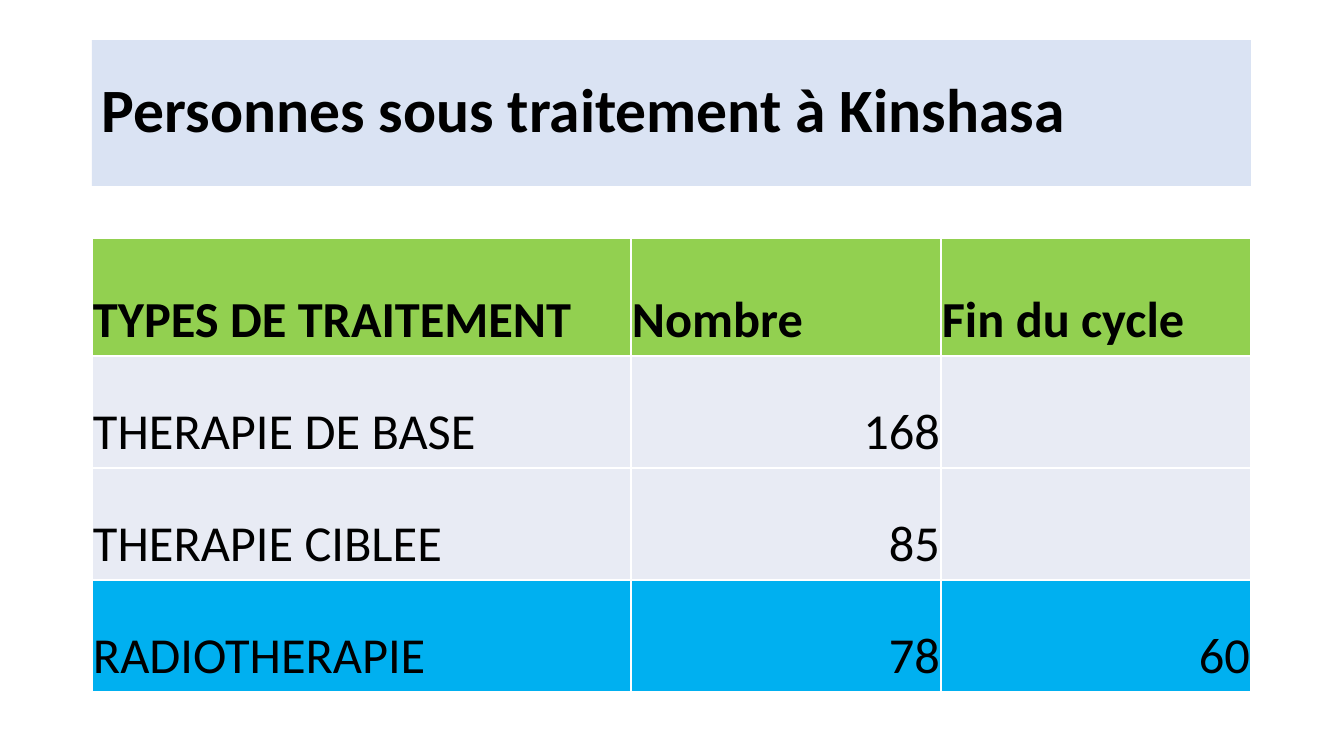
from lxml import etree
from pptx import Presentation
from pptx.dml.color import RGBColor
from pptx.enum.shapes import MSO_SHAPE
from pptx.enum.text import MSO_ANCHOR, PP_ALIGN
from pptx.oxml import parse_xml
from pptx.util import Pt

RECT = MSO_SHAPE.RECTANGLE
MIDDLE, BOTTOM = MSO_ANCHOR.MIDDLE, MSO_ANCHOR.BOTTOM
LEFT, RIGHT = PP_ALIGN.LEFT, PP_ALIGN.RIGHT
NS = "http://schemas.openxmlformats.org/drawingml/2006/main"
THEME = {
    "font": "Calibri", "ink": "000000", "banner": "DAE3F3",
    "head": "92D050", "plain": "E8EBF4", "accent": "00B0F0",
    "rule": "FFFFFF", "title": 44, "body": 36,
}


def px(count):
    return round(count * 914400 / 100.8)


def write(frame, text, size, bold, align):
    para = frame.paragraphs[0]
    para.text = text
    para.alignment = align
    font = para.font
    font.name = THEME["font"]
    font.size = Pt(THEME[size])
    font.bold = bold
    font.color.rgb = RGBColor.from_string(THEME["ink"])
    return para


deck = Presentation()
deck.slide_width, deck.slide_height = px(1344), px(756)
slide = deck.slides.add_slide(deck.slide_layouts[6])

banner = slide.shapes.add_shape(RECT, px(92), px(40), px(1159), px(146))
banner.shadow.inherit = False
banner.fill.solid()
banner.fill.fore_color.rgb = RGBColor.from_string(THEME["banner"])
banner.line.fill.background()
frame = banner.text_frame
frame.word_wrap = True
frame.vertical_anchor = MIDDLE
title = write(frame, "Personnes sous traitement à Kinshasa", "title", True, LEFT)
title.line_spacing = 0.9

rows = [
    ("head", "TYPES DE TRAITEMENT", "Nombre", "Fin du cycle"),
    ("plain", "THERAPIE DE BASE", "168", ""),
    ("plain", "THERAPIE CIBLEE", "85", ""),
    ("accent", "RADIOTHERAPIE", "78", "60"),
]
widths = [539, 310, 310]
heights = [118, 112, 112, 112]
grid = slide.shapes.add_table(
    len(rows), len(widths), px(92), px(238), px(sum(widths)), px(sum(heights))
).table
for column, width in zip(grid.columns, widths):
    column.width = px(width)

for r, (fill, *texts) in enumerate(rows):
    grid.rows[r].height = px(heights[r])
    for c, text in enumerate(texts):
        cell = grid.cell(r, c)
        cell.vertical_anchor = BOTTOM
        cell.margin_left = cell.margin_right = px(1)
        cell.margin_top = cell.margin_bottom = px(5)
        for side in "LRTB":
            edge = etree.Element(f"{{{NS}}}ln{side}", w=str(Pt(0.96)))
            paint = etree.SubElement(edge, f"{{{NS}}}solidFill")
            etree.SubElement(paint, f"{{{NS}}}srgbClr", val=THEME["rule"])
            cell._tc.get_or_add_tcPr().append(parse_xml(etree.tostring(edge)))
        cell.fill.solid()
        cell.fill.fore_color.rgb = RGBColor.from_string(THEME[fill])
        align = RIGHT if r and c else LEFT
        write(cell.text_frame, text, "body", r == 0, align)

deck.save("out.pptx")
